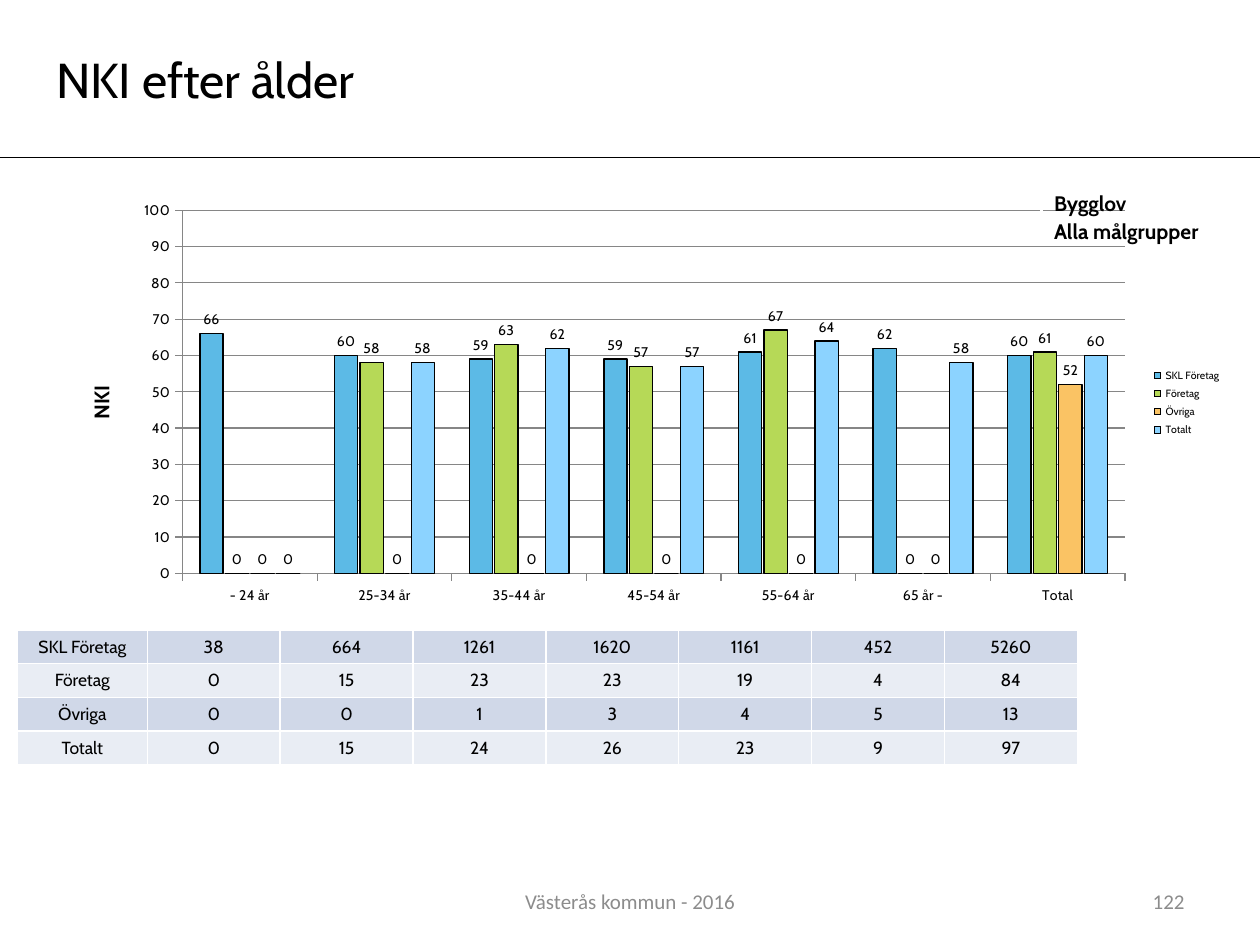
from dataclasses import dataclass

from lxml.etree import SubElement
from pptx import Presentation
from pptx.chart.data import CategoryChartData
from pptx.dml.color import RGBColor
from pptx.enum.chart import XL_CHART_TYPE, XL_LABEL_POSITION, XL_LEGEND_POSITION, XL_TICK_MARK
from pptx.enum.shapes import MSO_CONNECTOR, MSO_SHAPE
from pptx.enum.text import MSO_ANCHOR, PP_ALIGN
from pptx.oxml import parse_xml
from pptx.oxml.ns import nsdecls, qn
from pptx.util import Cm, Pt


@dataclass(frozen=True)
class Theme:
    font: str = "Cabin"
    footer_font: str = "Calibri"
    text: str = "000000"
    muted: str = "8C8C8C"
    grid: str = "868686"
    white: str = "FFFFFF"
    bands: tuple = ("D0D8E8", "E9EDF4")
    series: tuple = ("5CBAE6", "B6D957", "FAC364", "8CD3FF")
    title_size: int = 28
    label_size: int = 12
    table_size: int = 10
    axis_size: int = 8
    legend_size: int = 6


THEME = Theme()
AGES = ["- 24 år", "25-34 år", "35-44 år", "45-54 år", "55-64 år", "65 år -", "Total"]
SCORES = {
    "SKL Företag": [66, 60, 59, 59, 61, 62, 60],
    "Företag": [None, 58, 63, 57, 67, None, 61],
    "Övriga": [None, None, None, None, None, None, 52],
    "Totalt": [None, 58, 62, 57, 64, 58, 60],
}
RESPONSES = {
    "SKL Företag": [38, 664, 1261, 1620, 1161, 452, 5260],
    "Företag": [0, 15, 23, 23, 19, 4, 84],
    "Övriga": [0, 0, 1, 3, 4, 5, 13],
    "Totalt": [0, 15, 24, 26, 23, 9, 97],
}


def rgb(value):
    return RGBColor.from_string(value)


def style_font(font, size, color=THEME.text, name=THEME.font, bold=False):
    font.name, font.size, font.bold = name, Pt(size), bold
    font.color.rgb = rgb(color)


def style_line(line, color, width=0.75):
    line.color.rgb = rgb(color)
    line.width = Pt(width)


def add_label(slide, box, text, size, bold=False, indent=0):
    """Unfilled rectangle with a white outline and left-aligned text."""
    shape = slide.shapes.add_shape(MSO_SHAPE.RECTANGLE, *map(Cm, box))
    shape.shadow.inherit = False
    shape.fill.background()
    style_line(shape.line, THEME.white, 2)
    frame = shape.text_frame
    frame.word_wrap = True
    frame.vertical_anchor = MSO_ANCHOR.MIDDLE
    paragraph = frame.paragraphs[0]
    paragraph.text = text
    paragraph.alignment = PP_ALIGN.LEFT
    if indent:
        properties = paragraph._p.get_or_add_pPr()
        properties.set("marL", "0")
        properties.set("indent", str(Cm(indent)))
    style_font(paragraph.font, size, bold=bold)


def add_header(slide, box):
    left, top, width, height = box
    add_label(slide, (left + 0.17, top + 1.09, 15.24, 0.99), "NKI efter ålder",
              THEME.title_size, indent=0.71)
    bottom = Cm(top + height)
    rule = slide.shapes.add_connector(MSO_CONNECTOR.STRAIGHT, Cm(left), bottom,
                                      Cm(left + width), bottom)
    style_line(rule.line, THEME.text)
    SubElement(rule._element.spPr, qn("a:effectLst"))


def add_group_labels(slide, box):
    left, top, width, step = box
    for index, text in enumerate(("Bygglov", "Alla målgrupper")):
        add_label(slide, (left, top + index * step, width, 0.43), text,
                  THEME.label_size, bold=True)


def set_plot_layout(chart, chart_size, plot_box):
    """Fix the inner plot area, given in centimetres from the chart's corner."""
    chart_width, chart_height = chart_size
    left, top, width, height = plot_box
    plot_area = chart._chartSpace.chart.plotArea
    for old_layout in plot_area.findall(qn("c:layout")):
        plot_area.remove(old_layout)
    plot_area.insert(0, parse_xml(
        f'<c:layout {nsdecls("c")}><c:manualLayout><c:layoutTarget val="inner"/>'
        f'<c:xMode val="edge"/><c:yMode val="edge"/>'
        f'<c:x val="{left / chart_width}"/><c:y val="{top / chart_height}"/>'
        f'<c:w val="{width / chart_width}"/><c:h val="{height / chart_height}"/>'
        f'</c:manualLayout></c:layout>'))


def add_score_chart(slide, box):
    data = CategoryChartData()
    data.categories = AGES
    for name, values in SCORES.items():
        data.add_series(name, values)
    chart = slide.shapes.add_chart(XL_CHART_TYPE.COLUMN_CLUSTERED, *map(Cm, box), data).chart
    style_font(chart.font, THEME.axis_size)
    chart.has_title = False
    set_plot_layout(chart, box[2:], (2.43, 0.35, 19, 7.32))

    # Missing scores are drawn as zero
    chart._chartSpace.chart.find(qn("c:dispBlanksAs")).set("val", "zero")

    # Columns and their values
    plot = chart.plots[0]
    plot.gap_width, plot.overlap, plot.vary_by_categories = 150, -10, False
    for series, color in zip(plot.series, THEME.series):
        series.format.fill.solid()
        series.format.fill.fore_color.rgb = rgb(color)
        style_line(series.format.line, THEME.text)
    plot.has_data_labels = True
    labels = plot.data_labels
    labels.show_value = True
    labels.position = XL_LABEL_POSITION.OUTSIDE_END
    style_font(labels.font, THEME.axis_size)

    # Axes
    value_axis = chart.value_axis
    for axis in (chart.category_axis, value_axis):
        axis.major_tick_mark = XL_TICK_MARK.OUTSIDE
        style_font(axis.tick_labels.font, THEME.axis_size)
        style_line(axis.format.line, THEME.grid)
    value_axis.minimum_scale, value_axis.maximum_scale, value_axis.major_unit = 0, 100, 10
    value_axis.has_major_gridlines = True
    style_line(value_axis.major_gridlines.format.line, THEME.grid)
    title_frame = value_axis.axis_title.text_frame
    title_frame.text = "NKI"
    style_font(title_frame.paragraphs[0].font, THEME.label_size, bold=True)
    body = title_frame._txBody.find(qn("a:bodyPr"))
    body.set("rot", "-5400000")
    body.set("vert", "horz")

    # Legend
    chart.has_legend = True
    chart.legend.position = XL_LEGEND_POSITION.RIGHT
    chart.legend.include_in_layout = False
    style_font(chart.legend.font, THEME.legend_size)


def style_cell(cell, text, fill):
    cell.fill.solid()
    cell.fill.fore_color.rgb = rgb(fill)
    paragraph = cell.text_frame.paragraphs[0]
    paragraph.text = text
    paragraph.alignment = PP_ALIGN.CENTER
    style_font(paragraph.font, THEME.table_size)
    for index, side in enumerate(("lnL", "lnR", "lnT", "lnB")):
        cell._tc.get_or_add_tcPr().insert(index, parse_xml(
            f'<a:{side} {nsdecls("a")} w="{Pt(1)}"><a:solidFill>'
            f'<a:srgbClr val="{THEME.white}"/></a:solidFill></a:{side}>'))


def add_response_table(slide, box):
    left, top, width, height = map(Cm, box)
    table = slide.shapes.add_table(len(RESPONSES), len(AGES) + 1, left, top, width, height).table
    table.first_row = table.horz_banding = False
    name_width = Cm(2.62)
    for index, column in enumerate(table.columns):
        column.width = (width - name_width) // len(AGES) if index else name_width
    for row, (name, counts) in enumerate(RESPONSES.items()):
        for column, value in enumerate([name, *counts]):
            style_cell(table.cell(row, column), str(value), THEME.bands[row % 2])


def add_footer(slide, box):
    left, top, width, height = box
    number_width = 5.92
    parts = (("Västerås kommun - 2016", left, 8.05, PP_ALIGN.CENTER),
             ("122", left + width - number_width, number_width, PP_ALIGN.RIGHT))
    for text, part_left, part_width, alignment in parts:
        text_box = slide.shapes.add_textbox(Cm(part_left), Cm(top), Cm(part_width), Cm(height))
        frame = text_box.text_frame
        frame.word_wrap = True
        frame.vertical_anchor = MSO_ANCHOR.MIDDLE
        paragraph = frame.paragraphs[0]
        paragraph.text = text
        paragraph.alignment = alignment
        style_font(paragraph.font, THEME.label_size, THEME.muted, THEME.footer_font)


def main():
    presentation = Presentation()
    presentation.slide_width, presentation.slide_height = Cm(25.4), Cm(19.05)
    slide = presentation.slides.add_slide(presentation.slide_layouts[6])
    add_footer(slide, (8.68, 17.65, 15.45, 1.02))
    add_score_chart(slide, (1.25, 3.89, 23.64, 8.46))
    add_response_table(slide, (0.35, 12.7, 21.37, 2.71))
    add_group_labels(slide, (21, 3.89, 4.22, 0.56))
    add_header(slide, (0, 0, 25.4, 3.17))
    presentation.save("out.pptx")


if __name__ == "__main__":
    main()
